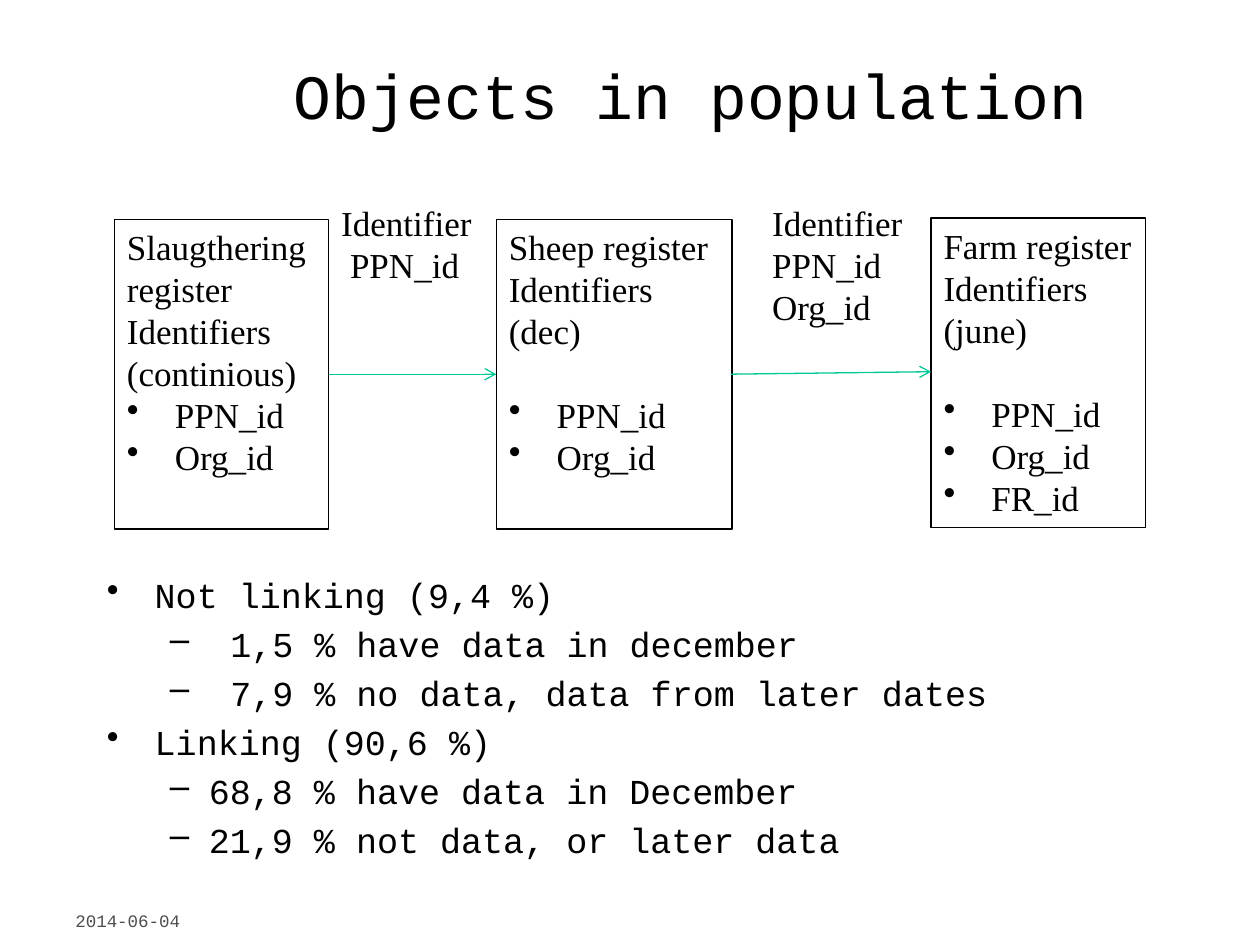
import pptx
import pptx.dml.color
import pptx.enum.shapes
import pptx.enum.text
import pptx.oxml.ns
import pptx.util
from lxml import etree

Inches = pptx.util.Inches
Pt = pptx.util.Pt
BLACK = pptx.dml.color.RGBColor(0x00, 0x00, 0x00)
GRAY = pptx.dml.color.RGBColor(0x4D, 0x4D, 0x4D)
GREEN = pptx.dml.color.RGBColor(0x00, 0xC8, 0x96)
MONO = "Courier New"
SERIF = "Times New Roman"
TOP = 1.74
TALL = 2.46


def add_sub(node, tag, **attrs):
    """Add a DrawingML child element."""
    return etree.SubElement(node, pptx.oxml.ns.qn(tag), **attrs)


def add_para(frame, text, face, size=20, color=BLACK, gap=0, lead=None):
    """Fill the empty first paragraph or append a new one."""
    para = frame.paragraphs[0]
    if para.runs:
        para = frame.add_paragraph()
        para.space_before = Pt(gap)
    para.alignment = pptx.enum.text.PP_ALIGN.LEFT
    if lead:
        para.line_spacing = Pt(lead)
    para.add_run().text = text
    para.font.name = face
    para.font.size = Pt(size)
    para.font.color.rgb = color
    return para


def set_indent(para, left, hang=0, mark=None):
    """Indent a paragraph and give it a bullet if a mark is named."""
    props = para._p.get_or_add_pPr()
    props.set("marL", str(Inches(left)))
    props.set("indent", str(-Inches(hang)))
    if mark:
        bullet = etree.Element(pptx.oxml.ns.qn("a:buChar"), char=mark)
        props.insert(list(props).index(props.find(pptx.oxml.ns.qn("a:defRPr"))), bullet)


def add_text(slide, left, top, width, height):
    """Add a wrapping text box and return its frame."""
    frame = slide.shapes.add_textbox(
        Inches(left), Inches(top), Inches(width), Inches(height)).text_frame
    frame.word_wrap = True
    return frame


def add_box(slide, left, top, width, heads, ids, gap):
    """Add a register box with heading lines and bulleted ids."""
    box = slide.shapes.add_shape(
        pptx.enum.shapes.MSO_SHAPE.RECTANGLE,
        Inches(left), Inches(top), Inches(width), Inches(TALL))
    box.shadow.inherit = False
    box.fill.background()
    box.line.color.rgb = BLACK
    box.line.width = Pt(0.75)
    frame = box.text_frame
    frame.word_wrap = True
    frame.margin_right = 0
    frame.vertical_anchor = pptx.enum.text.MSO_ANCHOR.TOP
    for text in heads:
        add_para(frame, text, SERIF, lead=24)
    for index, text in enumerate(ids):
        para = add_para(frame, text, SERIF, gap=0 if index else gap, lead=24)
        set_indent(para, 0.38, 0.38, "•")


def add_arrow(slide, start, end):
    """Add a green line with an open arrowhead at its end."""
    line = slide.shapes.add_connector(
        pptx.enum.shapes.MSO_CONNECTOR.STRAIGHT, *map(Inches, start + end))
    line.line.color.rgb = GREEN
    line.line.width = Pt(0.75)
    add_sub(line.line._get_or_add_ln(), "a:tailEnd", type="arrow")
    add_sub(line._element.spPr, "a:effectLst")


def add_label(slide, left, height, lines, shift=0):
    """Add the link key over an arrow, with later lines shifted."""
    frame = add_text(slide, left, 1.55, 1.24, height)
    frame.margin_right = 0
    for index, text in enumerate(lines):
        para = add_para(frame, text, SERIF, lead=24)
        if index:
            set_indent(para, shift)


def add_list(slide, items):
    """Add the two-level list of linking results."""
    frame = add_text(slide, 0.75, 4.46, 8.77, 2.7)
    frame.margin_top = Inches(0.09)
    for level, text, pad in items:
        para = add_para(frame, text, MONO, gap=4, lead=24)
        para.level = level
        if level:
            set_indent(para, 0.81 + pad, 0.31 + pad, "–")
        else:
            set_indent(para, 0.38, 0.38, "•")


def main():
    """Build and save the slide."""
    deck = pptx.Presentation()
    deck.slide_width = Inches(10)
    deck.slide_height = Inches(7.5)
    slide = deck.slides.add_slide(deck.slide_layouts[6])

    title = add_text(slide, 1.77, 0.21, 7.42, 1.08)
    title.vertical_anchor = pptx.enum.text.MSO_ANCHOR.MIDDLE
    para = add_para(title, "Objects in population", MONO, 36)
    para.alignment = pptx.enum.text.PP_ALIGN.CENTER
    date = add_text(slide, 0.5, 7.17, 2.08, 0.33)
    add_para(date, "2014-06-04", MONO, 10, GRAY)

    ids = ["PPN_id", "Org_id"]
    add_box(slide, 0.91, TOP, 1.7,
            ["Slaugthering", "register", "Identifiers", "(continious)"], ids, 0)
    add_box(slide, 3.94, TOP, 1.87,
            ["Sheep register", "Identifiers", "(dec)"], ids, 24)
    add_box(slide, 7.39, 1.73, 1.7,
            ["Farm register", "Identifiers", "(june)"], ids + ["FR_id"], 24)
    add_arrow(slide, (2.61, 2.97), (3.94, 2.97))
    add_arrow(slide, (5.8, 2.97), (7.39, 2.95))
    add_label(slide, 2.61, 0.77, ["Identifier", "PPN_id"], 0.07)
    add_label(slide, 6.03, 1.11, ["Identifier"] + ids)

    add_list(slide, [
        (0, "Not linking (9,4 %)", 0),
        (1, "1,5 % have data in december", 0.17),
        (1, "7,9 % no data, data from later dates", 0.17),
        (0, "Linking (90,6 %)", 0),
        (1, "68,8 % have data in December", 0),
        (1, "21,9 % not data, or later data", 0),
    ])
    deck.save("out.pptx")


if __name__ == "__main__":
    main()
